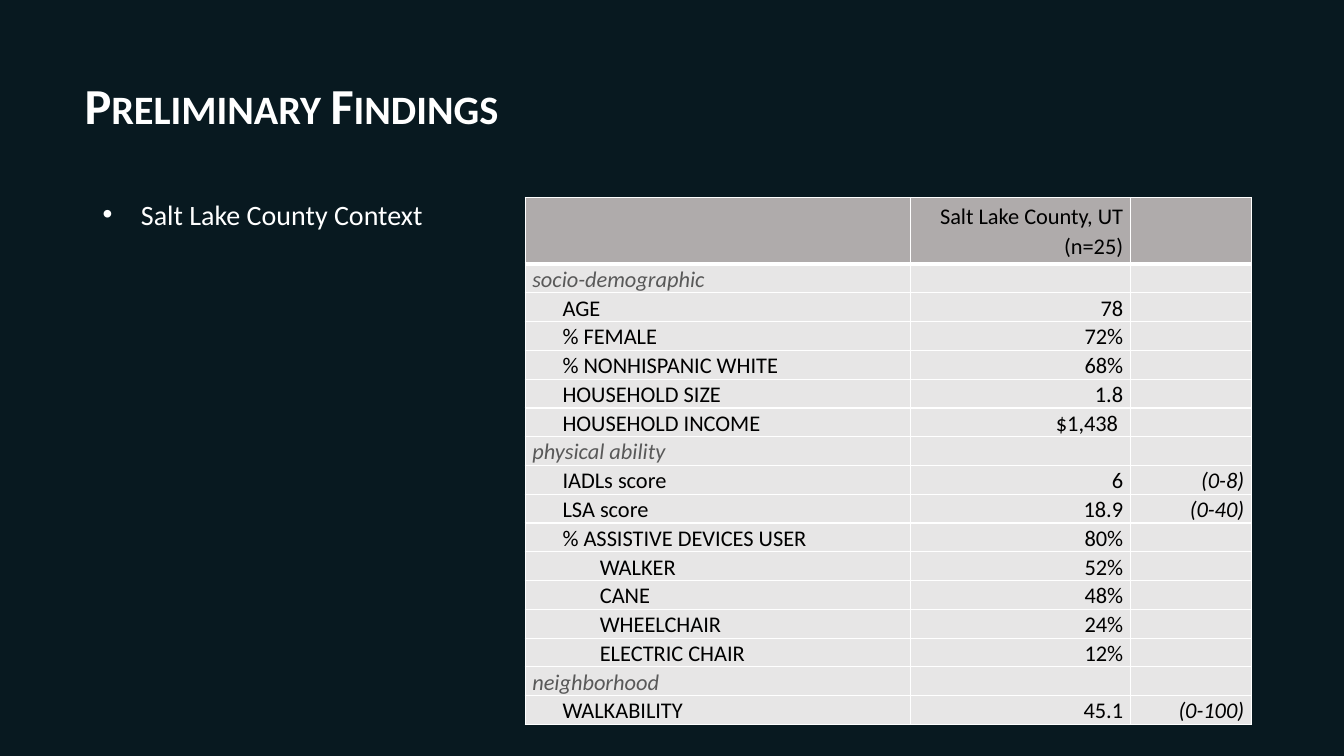
from lxml import etree
from pptx import Presentation
from pptx import util as u
from pptx.dml.color import RGBColor
from pptx.enum import text as t
from pptx.oxml import ns

COLORS = {
    "background": "081920",
    "light": "FFFFFF",
    "dark": "000000",
    "section": "595959",
    "header": "AFABAB",
    "body": "E7E6E6",
}
INDENTS = [0, 0.3, 0.67]
COLUMN_WIDTHS = [3.82, 2.18, 1.2]
HEADER_HEIGHT, ROW_HEIGHT = 0.66, 0.26

FINDINGS = [
    (0, "socio-demographic", "", ""),
    (1, "AGE", "78", ""),
    (1, "% FEMALE", "72%", ""),
    (1, "% NONHISPANIC WHITE", "68%", ""),
    (1, "HOUSEHOLD SIZE", "1.8", ""),
    (1, "HOUSEHOLD INCOME", "$1,438 ", ""),
    (0, "physical ability", "", ""),
    (1, "IADLs score", "6", "(0-8)"),
    (1, "LSA score", "18.9", "(0-40)"),
    (1, "% ASSISTIVE DEVICES USER", "80%", ""),
    (2, "WALKER", "52%", ""),
    (2, "CANE", "48%", ""),
    (2, "WHEELCHAIR", "24%", ""),
    (2, "ELECTRIC CHAIR", "12%", ""),
    (0, "neighborhood", "", ""),
    (1, "WALKABILITY", "45.1", "(0-100)"),
]


def rgb(name):
    return RGBColor.from_string(COLORS[name])


def write(frame, words, size=16, color="dark", bold=False, italic=False, small_caps=False,
          align=t.PP_ALIGN.LEFT, indent=0, hanging=0, before=None, spacing=None, bullet=None):
    paragraph = frame.paragraphs[0]
    paragraph.alignment = align
    if spacing:
        paragraph.line_spacing = spacing
    if before:
        paragraph.space_before = u.Pt(before)
    properties = paragraph._p.get_or_add_pPr()
    properties.set("marL", str(u.Inches(indent)))
    properties.set("indent", str(u.Inches(-hanging)))
    if bullet:
        etree.SubElement(properties, ns.qn("a:buFont"), typeface="Arial")
        etree.SubElement(properties, ns.qn("a:buChar"), char=bullet)
    if not words:
        etree.SubElement(paragraph._p, ns.qn("a:endParaRPr"), sz=str(size * 100))
        return
    run = paragraph.add_run()
    run.text = words
    run.font.name = "Calibri"
    run.font.size = u.Pt(size)
    run.font.bold = bold
    run.font.italic = italic
    run.font.color.rgb = rgb(color)
    if small_caps:
        run.font._element.set("cap", "small")


class FindingsSlide:
    def __init__(self, deck):
        self.slide = deck.slides.add_slide(deck.slide_layouts[6])
        background = self.slide.background.fill
        background.solid()
        background.fore_color.rgb = rgb("background")

    def text(self, words, left, top, width, height, **style):
        box = self.slide.shapes.add_textbox(*map(u.Inches, (left, top, width, height)))
        box.text_frame.word_wrap = True
        box.text_frame.auto_size = t.MSO_AUTO_SIZE.SHAPE_TO_FIT_TEXT
        write(box.text_frame, words, color="light", **style)

    def cell(self, cell, words, fill, top_line=1, bottom_line=1, **style):
        cell.margin_left = cell.margin_right = u.Inches(0.07)
        cell.margin_top = cell.margin_bottom = 0
        cell.fill.solid()
        cell.fill.fore_color.rgb = rgb(fill)
        sides = [("L", 1), ("R", 1), ("T", top_line), ("B", bottom_line)]
        for place, (side, points) in enumerate(sides):
            line = etree.Element(ns.qn("a:ln" + side), w=str(u.Pt(points)))
            paint = etree.SubElement(line, ns.qn("a:solidFill"))
            etree.SubElement(paint, ns.qn("a:srgbClr"), val=COLORS["light"])
            cell._tc.get_or_add_tcPr().insert(place, line)
        write(cell.text_frame, words, spacing=1.07, **style)

    def table(self, left, top, headings, findings):
        height = HEADER_HEIGHT + ROW_HEIGHT * len(findings)
        frame = self.slide.shapes.add_table(
            len(findings) + 1, len(headings),
            *map(u.Inches, (left, top, sum(COLUMN_WIDTHS), height)))
        table = frame.table
        table.horz_banding = False
        for column, width in zip(table.columns, COLUMN_WIDTHS):
            column.width = u.Inches(width)
        for number, row in enumerate(table.rows):
            row.height = u.Inches(ROW_HEIGHT if number else HEADER_HEIGHT)
        for column, heading in enumerate(headings):
            header = table.cell(0, column)
            header.vertical_anchor = t.MSO_ANCHOR.MIDDLE
            self.cell(header, heading, "header", bottom_line=3, align=t.PP_ALIGN.RIGHT)
        for row, (level, measure, value, scale) in enumerate(findings, 1):
            top_line = 3 if row == 1 else 1
            self.cell(table.cell(row, 0), measure, "body", top_line, indent=INDENTS[level],
                      italic=level == 0, color="dark" if level else "section")
            self.cell(table.cell(row, 1), value, "body", top_line, align=t.PP_ALIGN.RIGHT)
            self.cell(table.cell(row, 2), scale, "body", top_line, align=t.PP_ALIGN.RIGHT,
                      italic=True)


def main():
    deck = Presentation()
    deck.slide_width, deck.slide_height = u.Inches(13.33), u.Inches(7.5)
    findings = FindingsSlide(deck)
    findings.text("Preliminary Findings", 0.74, 0.69, 10.87, 0.71,
                  size=36, bold=True, small_caps=True)
    findings.table(5.21, 1.96, ["", "Salt Lake County, UT (n=25)", ""], FINDINGS)
    findings.text("Salt Lake County Context", 0.92, 1.91, 5.47, 0.44,
                  size=20, indent=0.38, hanging=0.38, before=12, bullet="•")
    deck.save("out.pptx")


if __name__ == "__main__":
    main()
